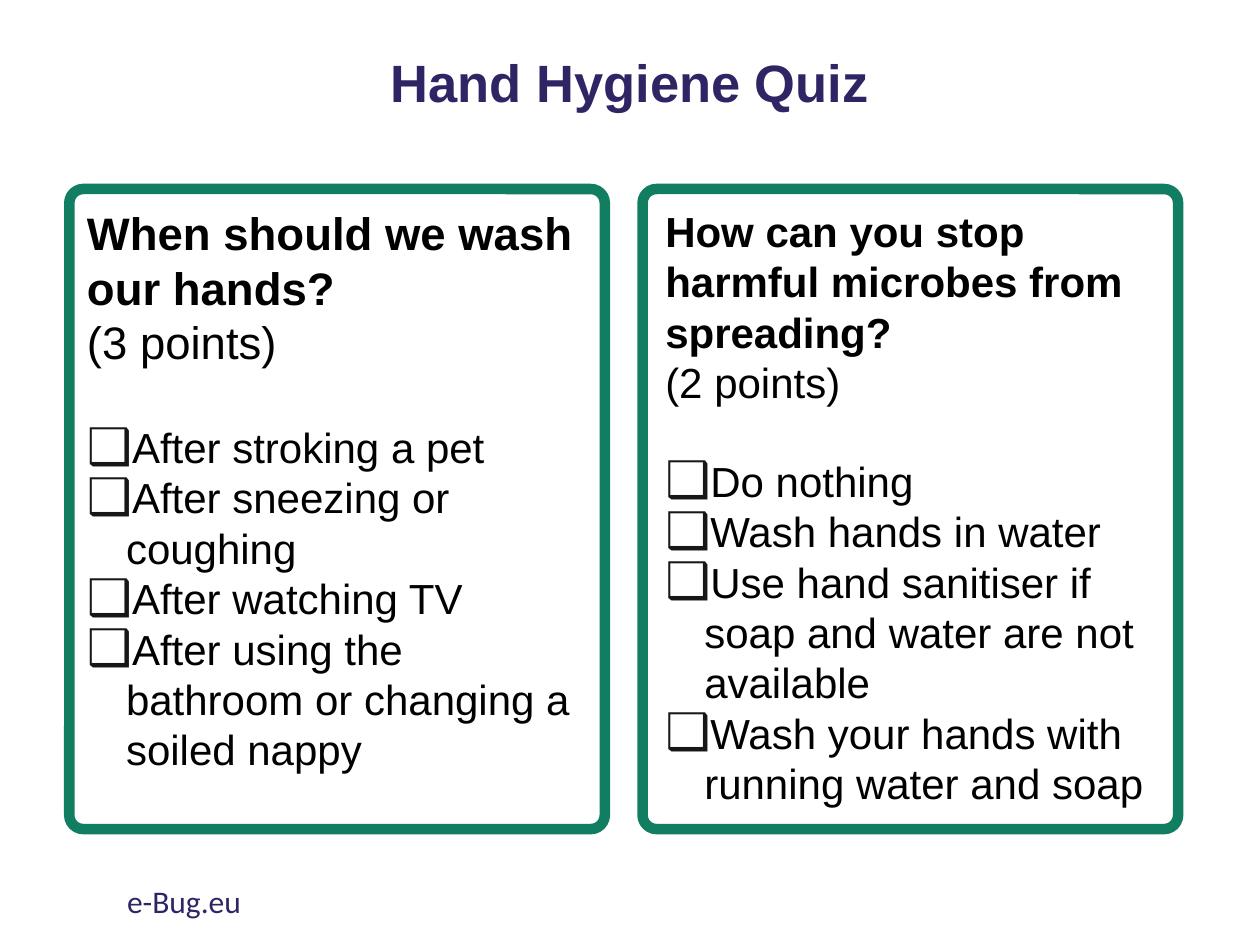
from lxml import etree
from pptx import Presentation
from pptx import util as u
from pptx.dml.color import RGBColor
from pptx.enum import shapes, text
from pptx.oxml.ns import qn

NAVY, GREEN, BLACK, BULLET = "302564", "117E62", "000000", "181717"
LINE_HEIGHT = 1.15

QUESTIONS = [
    {"left": 0.59, "width": 4.08, "size": 26, "points": "(3 points)",
     "question": "When should we wash our hands?",
     "answers": ["After stroking a pet", "After sneezing or coughing",
                 "After watching TV",
                 "After using the bathroom or changing a soiled nappy"]},
    {"left": 5.18, "width": 4.18, "size": 24, "points": "(2 points)",
     "question": "How can you stop harmful microbes from spreading?",
     "answers": ["Do nothing", "Wash hands in water",
                 "Use hand sanitiser if soap and water are not available",
                 "Wash your hands with running water and soap"]},
]


def add_run(paragraph, words, size, color, bold=False, font="Arial"):
    run = paragraph.add_run()
    run.text = words
    run.font.name, run.font.size, run.font.bold = font, u.Pt(size), bold
    run.font.color.rgb = RGBColor.from_string(color)


def set_bullet(paragraph, char=None):
    """Give the paragraph a hanging tick box, or no bullet and no indent."""
    props = paragraph._p.get_or_add_pPr()
    indent = u.Inches(0.31) if char else 0
    props.set("marL", str(indent))
    props.set("indent", str(-indent))
    if not char:
        etree.SubElement(props, qn("a:buNone"))
        return
    color = etree.SubElement(props, qn("a:buClr"))
    etree.SubElement(color, qn("a:srgbClr"), val=BULLET)
    etree.SubElement(props, qn("a:buSzPct"), val="120000")
    etree.SubElement(props, qn("a:buChar"), char=char)


prs = Presentation()
prs.slide_width, prs.slide_height = u.Inches(10), u.Inches(7.5)
slide = prs.slides.add_slide(prs.slide_layouts[3])
title, *bodies = slide.placeholders

# Title
title.left, title.top = u.Inches(0.7), u.Inches(0.28)
title.width, title.height = u.Inches(8.6), u.Inches(0.8)
title.text_frame.vertical_anchor = text.MSO_ANCHOR.MIDDLE
heading = title.text_frame.paragraphs[0]
heading.alignment = text.PP_ALIGN.CENTER
heading.line_spacing = 0.9
add_run(heading, "Hand Hygiene Quiz", 30, NAVY, bold=True)

# Two framed question cards
for column, (body, card) in enumerate(zip(bodies, QUESTIONS)):
    frame = slide.shapes.add_shape(
        shapes.MSO_SHAPE.ROUNDED_RECTANGLE, u.Inches(0.55 + 4.55 * column),
        u.Inches(1.5), u.Inches(4.25), u.Inches(5.08))
    frame.adjustments[0] = 0.026
    frame.shadow.inherit = False
    frame.fill.background()
    frame.line.color.rgb = RGBColor.from_string(GREEN)
    frame.line.width = u.Pt(6)

    body.left, body.top = u.Inches(card["left"]), u.Inches(1.58)
    body.width, body.height = u.Inches(card["width"]), u.Inches(4.95)
    content = body.text_frame
    content.auto_size = text.MSO_AUTO_SIZE.NONE
    lines = [(card["question"], card["size"], True, None),
             (card["points"], card["size"], False, None)]
    lines += [(answer, 24, False, "❑") for answer in card["answers"]]
    for row, (words, size, bold, char) in enumerate(lines):
        paragraph = content.paragraphs[0] if row == 0 else content.add_paragraph()
        set_bullet(paragraph, char)
        # One line of air separates the question from its answers
        paragraph.space_before = u.Pt(card["size"] * LINE_HEIGHT if row == 2 else 0)
        add_run(paragraph, words, size, BLACK, bold)

# Site address
site = slide.shapes.add_textbox(
    u.Inches(0.91), u.Inches(6.95), u.Inches(3.38), u.Inches(0.4))
site.text_frame.word_wrap = True
add_run(site.text_frame.paragraphs[0], "e-Bug.eu", 18, NAVY, font="Calibri")

prs.save("out.pptx")
